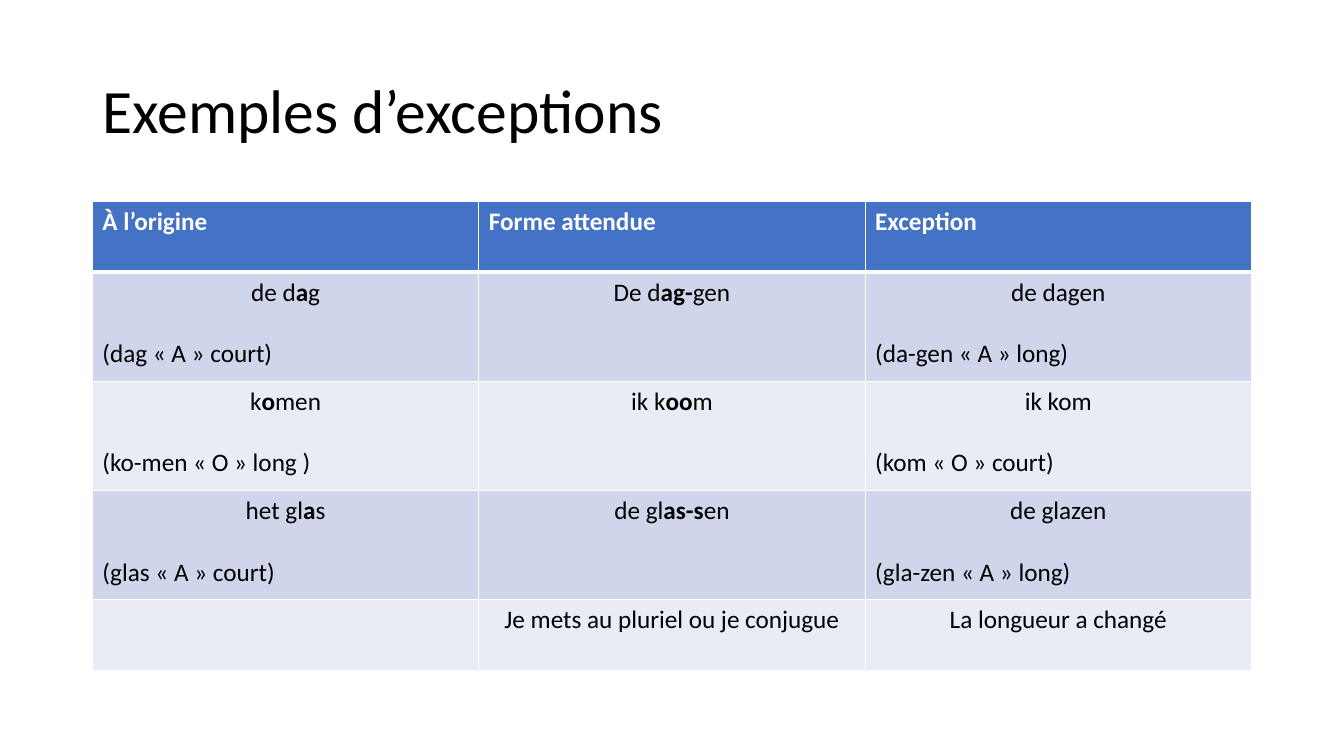
from lxml.etree import SubElement
from pptx import Presentation
from pptx.dml.color import RGBColor
from pptx.enum.text import MSO_ANCHOR, PP_ALIGN
from pptx.oxml.ns import qn
from pptx.util import Pt

TITLE = "Exemples d’exceptions"
HEADERS = ["À l’origine", "Forme attendue", "Exception"]
ROWS = [
    [(("de d", "a", "g"), "(dag « A » court)"),
     (("De d", "ag-", "gen"), ""),
     (("de dagen",), "(da-gen « A » long)")],
    [(("k", "o", "men"), "(ko-men « O » long )"),
     (("ik k", "oo", "m"), ""),
     (("ik kom",), "(kom « O » court)")],
    [(("het gl", "a", "s"), "(glas « A » court)"),
     (("de gl", "as-s", "en"), ""),
     (("de glazen",), "(gla-zen « A » long)")],
    [((), ""),
     (("Je mets au pluriel ou je conjugue",), ""),
     (("La longueur a changé",), "")],
]

THEME = {
    "font": "Calibri", "title_size": 44, "size": 18, "note_gap": 22,
    "text": "000000", "header_text": "FFFFFF", "header": "4472C4",
    "bands": ("CFD5EA", "E9EBF5"), "rule": "FFFFFF",
    "rule_width": 1, "header_rule_width": 3,
}
LEFT, WIDTH = 66, 828
TITLE_TOP, TITLE_HEIGHT = 28.75, 104.4
TABLE_TOP = 144
ROW_HEIGHTS = [50.4, 78, 78, 78, 50.4]


def add_run(p, text, size, color, bold=False):
    r = p.add_run()
    r.text = text
    r.font.name = THEME["font"]
    r.font.size = Pt(size)
    r.font.bold = bold
    r.font.color.rgb = RGBColor.from_string(color)


def style_cell(cell, fill, top, bottom):
    tc_pr = cell._tc.get_or_add_tcPr()
    side = THEME["rule_width"]
    for tag, width in (("lnL", side), ("lnR", side), ("lnT", top), ("lnB", bottom)):
        ln = SubElement(tc_pr, qn(f"a:{tag}"), w=str(Pt(width)))
        SubElement(SubElement(ln, qn("a:solidFill")), qn("a:srgbClr"), val=THEME["rule"])
    cell.fill.solid()
    cell.fill.fore_color.rgb = RGBColor.from_string(fill)


def fill_example(cell, parts, note):
    p = cell.text_frame.paragraphs[0]
    p.alignment = PP_ALIGN.CENTER
    p.font.size = Pt(THEME["size"])
    for i, part in enumerate(parts):
        add_run(p, part, THEME["size"], THEME["text"], bold=i == 1)
    if note:
        p = cell.text_frame.add_paragraph()
        p.space_before = Pt(THEME["note_gap"])
        add_run(p, note, THEME["size"], THEME["text"])


def add_title(slide):
    sp = slide.shapes.add_textbox(Pt(LEFT), Pt(TITLE_TOP), Pt(WIDTH), Pt(TITLE_HEIGHT))
    tf = sp.text_frame
    tf.word_wrap = True
    tf.vertical_anchor = MSO_ANCHOR.MIDDLE
    p = tf.paragraphs[0]
    p.line_spacing = 0.9
    add_run(p, TITLE, THEME["title_size"], THEME["text"])


def add_examples(slide):
    table = slide.shapes.add_table(
        len(ROW_HEIGHTS), len(HEADERS),
        Pt(LEFT), Pt(TABLE_TOP), Pt(WIDTH), Pt(sum(ROW_HEIGHTS))).table
    for row, height in zip(table.rows, ROW_HEIGHTS):
        row.height = Pt(height)
    for col in table.columns:
        col.width = Pt(WIDTH / len(HEADERS))

    thin, thick = THEME["rule_width"], THEME["header_rule_width"]
    for c, header in enumerate(HEADERS):
        cell = table.cell(0, c)
        style_cell(cell, THEME["header"], thin, thick)
        add_run(cell.text_frame.paragraphs[0], header,
                THEME["size"], THEME["header_text"], bold=True)
    for r, row in enumerate(ROWS):
        for c, (parts, note) in enumerate(row):
            cell = table.cell(r + 1, c)
            style_cell(cell, THEME["bands"][r % 2], thick if r == 0 else thin, thin)
            fill_example(cell, parts, note)


def main():
    prs = Presentation()
    prs.slide_width, prs.slide_height = Pt(960), Pt(540)
    slide = prs.slides.add_slide(prs.slide_layouts[6])
    add_title(slide)
    add_examples(slide)
    prs.save("out.pptx")


if __name__ == "__main__":
    main()
